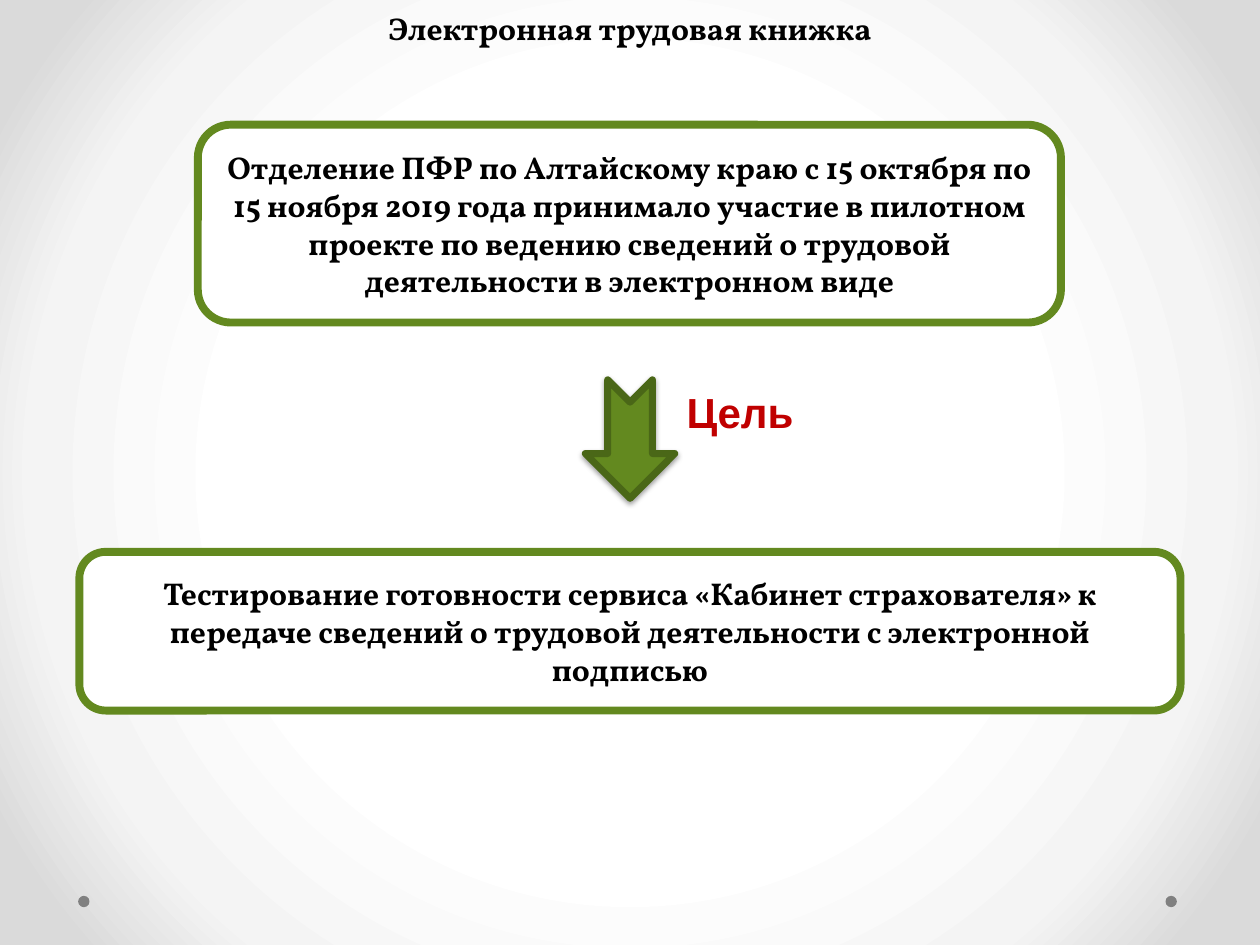
import pptx
import pptx.util
import pptx.dml.color
import pptx.enum.shapes
import pptx.enum.text
import pptx.oxml.ns
import lxml.etree

Inches = pptx.util.Inches
RGBColor = pptx.dml.color.RGBColor
SHAPES = pptx.enum.shapes.MSO_SHAPE
ALIGN = pptx.enum.text.PP_ALIGN
qn = pptx.oxml.ns.qn

WHITE = RGBColor(0xFF, 0xFF, 0xFF)
BLACK = RGBColor(0x00, 0x00, 0x00)
GREY = RGBColor(0x80, 0x80, 0x80)
LIGHT_GREY = RGBColor(0xF4, 0xF4, 0xF4)
EDGE_GREY = RGBColor(0xDA, 0xDA, 0xDA)
GREEN = RGBColor(0x63, 0x89, 0x1F)
DARK_GREEN = RGBColor(0x4A, 0x67, 0x17)
RED = RGBColor(0xC0, 0x00, 0x00)


def add_node(parent, tag, **attributes):
    return lxml.etree.SubElement(parent, qn(tag), attributes)


def write_text(shape, text, font, size, color, align):
    frame = shape.text_frame
    frame.word_wrap = True
    frame.text = text
    para = frame.paragraphs[0]
    para.alignment = align
    span = para.runs[0]
    span.font.name = font
    span.font.size = pptx.util.Pt(size)
    span.font.bold = True
    span.font.color.rgb = color


deck = pptx.Presentation()
deck.slide_width = Inches(10)
deck.slide_height = Inches(7.5)
page = deck.slides.add_slide(deck.slide_layouts[6])

page.background.fill.gradient()
gradient = next(page.element.iter(qn("a:gradFill")))
for child in list(gradient):
    gradient.remove(child)
stops = add_node(gradient, "a:gsLst")
for percent, color in ((50, WHITE), (76, LIGHT_GREY), (92, EDGE_GREY)):
    stop = add_node(stops, "a:gs", pos=str(percent * 1000))
    add_node(stop, "a:srgbClr", val=str(color))
circle = add_node(gradient, "a:path", path="circle")
add_node(circle, "a:fillToRect", l="50000", t="50000", r="50000", b="50000")

for left in (9.25, 0.62):
    dot = page.shapes.add_shape(SHAPES.OVAL, Inches(left), Inches(7.11), Inches(0.09), Inches(0.09))
    dot.shadow.inherit = False
    dot.fill.solid()
    dot.fill.fore_color.rgb = GREY
    dot.line.fill.background()

title = page.shapes.add_textbox(Inches(0), Inches(0.02), Inches(10), Inches(0.4))
write_text(title, "Электронная трудовая книжка", "Vollkorn", 18, BLACK, ALIGN.CENTER)

statements = (
    (0.63, 4.38, 8.74, 1.26,
     "Тестирование готовности сервиса «Кабинет страхователя» к передаче сведений "
     "о трудовой деятельности с электронной подписью"),
    (1.57, 0.99, 6.85, 1.57,
     "Отделение ПФР по Алтайскому краю с 15 октября по 15 ноября 2019 года принимало "
     "участие в пилотном проекте по ведению сведений о трудовой деятельности "
     "в электронном виде"),
)
for left, top, width, height, text in statements:
    box = page.shapes.add_shape(
        SHAPES.ROUNDED_RECTANGLE, Inches(left), Inches(top), Inches(width), Inches(height))
    box.shadow.inherit = False
    box.fill.solid()
    box.fill.fore_color.rgb = WHITE
    box.line.color.rgb = GREEN
    box.line.width = pptx.util.Pt(4.5)
    write_text(box, text, "Vollkorn", 18, BLACK, ALIGN.CENTER)

arrow = page.shapes.add_shape(
    SHAPES.NOTCHED_RIGHT_ARROW, Inches(4.53), Inches(3.13), Inches(0.94), Inches(0.71))
arrow.rotation = 90
arrow.fill.solid()
arrow.fill.fore_color.rgb = GREEN
arrow.line.color.rgb = DARK_GREEN
arrow.line.width = pptx.util.Pt(4)
add_node(next(arrow.element.iter(qn("a:ln"))), "a:round")
arrow.shadow.inherit = False
effects = next(arrow.element.iter(qn("a:effectLst")))
shadow = add_node(
    effects, "a:outerShdw", blurRad=str(pptx.util.Pt(3.1)), dist=str(pptx.util.Pt(1.6)),
    dir="5400000", rotWithShape="0")
shadow_color = add_node(shadow, "a:srgbClr", val=str(BLACK))
add_node(shadow_color, "a:alpha", val="38000")

goal = page.shapes.add_textbox(Inches(5.35), Inches(3.02), Inches(1.18), Inches(0.5))
write_text(goal, "Цель", "Arial", 24, RED, ALIGN.LEFT)

deck.save("out.pptx")
